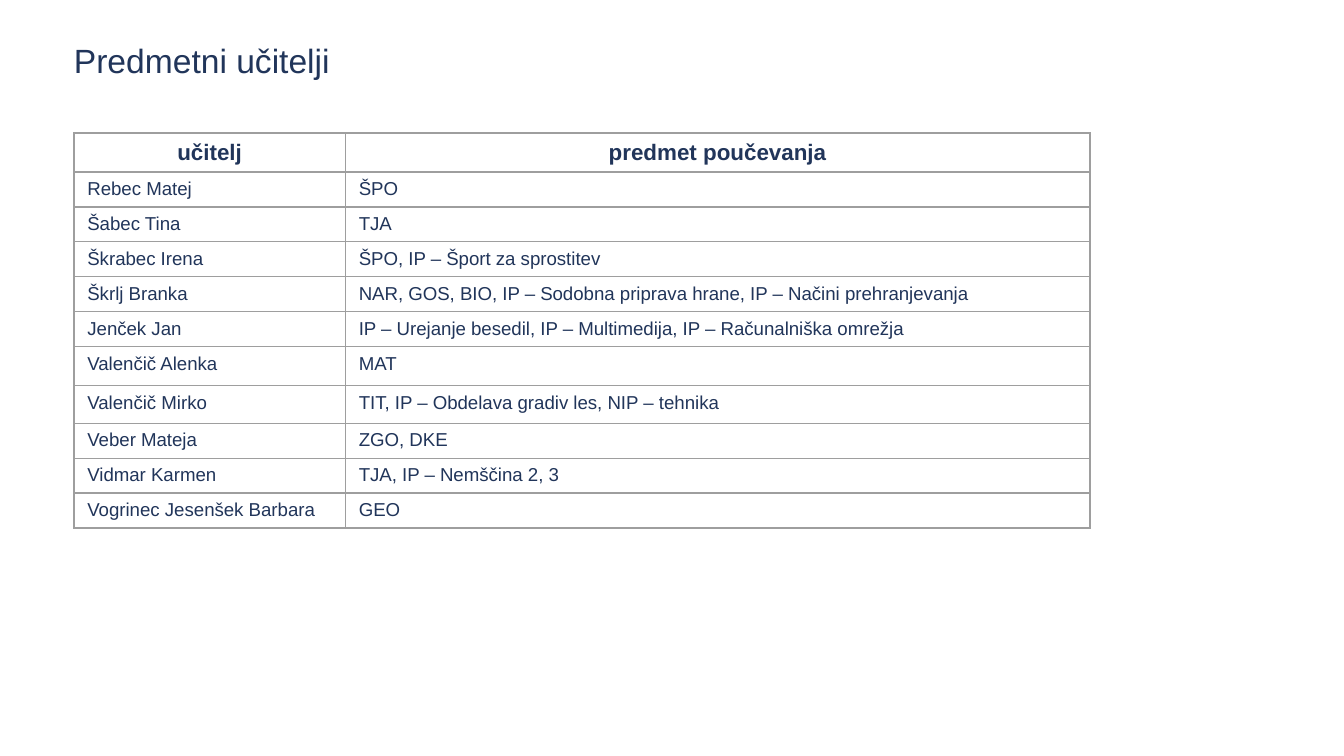
from lxml.etree import SubElement
from pptx import Presentation
from pptx.dml.color import RGBColor
from pptx.enum.text import MSO_ANCHOR, PP_ALIGN
from pptx.oxml.ns import qn
from pptx.util import Inches, Pt

# Content
TITLE = "Predmetni učitelji"
HEADER = ("učitelj", "predmet poučevanja")
TEACHERS = [
    ("Rebec Matej", "ŠPO"),
    ("Šabec Tina", "TJA"),
    ("Škrabec Irena", "ŠPO, IP – Šport za sprostitev"),
    ("Škrlj Branka", "NAR, GOS, BIO, IP – Sodobna priprava hrane, IP – Načini prehranjevanja"),
    ("Jenček Jan", "IP – Urejanje besedil, IP – Multimedija, IP – Računalniška omrežja"),
    ("Valenčič Alenka", "MAT"),
    ("Valenčič Mirko", "TIT, IP – Obdelava gradiv les, NIP – tehnika"),
    ("Veber Mateja", "ZGO, DKE"),
    ("Vidmar Karmen", "TJA, IP – Nemščina 2, 3"),
    ("Vogrinec Jesenšek Barbara", "GEO"),
]

# Format
COLORS = {"text": "21355A", "border": "9E9E9E"}
TITLE_FONT = {"name": "Arial", "size": Pt(18), "bold": False}
HEADER_FONT = {"name": "Arial", "size": Pt(12), "bold": True}
BODY_FONT = {"name": "Arial", "size": Pt(10), "bold": False}
COLUMN_WIDTHS = (2.02, 5.54)
ROW_HEIGHT = 0.26
TALL_ROWS = {0: 0.29, 6: 0.29, 7: 0.28}
MARGINS = {"margin_left": 0.1, "margin_right": 0.1, "margin_top": 0.05, "margin_bottom": 0.05}


def format_paragraph(paragraph, font_values, alignment):
    paragraph.alignment = alignment
    for name, value in font_values.items():
        setattr(paragraph.font, name, value)
    paragraph.font.color.rgb = RGBColor.from_string(COLORS["text"])


def add_borders(cell):
    properties = cell._tc.get_or_add_tcPr()
    for position, side in enumerate(("a:lnL", "a:lnR", "a:lnT", "a:lnB")):
        line = properties.makeelement(qn(side), {"w": str(Pt(0.75))})
        fill = SubElement(line, qn("a:solidFill"))
        SubElement(fill, qn("a:srgbClr"), val=COLORS["border"])
        properties.insert(position, line)


# Widescreen slide, 16:9
presentation = Presentation()
presentation.slide_width = Inches(10)
presentation.slide_height = Inches(10 * 9 / 16)
slide = presentation.slides.add_slide(presentation.slide_layouts[5])

# Title
title = slide.shapes.title
title.left, title.top, title.width, title.height = map(Inches, (0.45, 0.25, 7.55, 0.5))
frame = title.text_frame
frame.text = TITLE
frame.vertical_anchor = MSO_ANCHOR.TOP
frame.margin_top = Inches(0.05)
format_paragraph(frame.paragraphs[0], TITLE_FONT, PP_ALIGN.LEFT)

# Table of teachers and subjects
rows = [HEADER] + TEACHERS
heights = [TALL_ROWS.get(index, ROW_HEIGHT) for index in range(len(rows))]
table = slide.shapes.add_table(
    len(rows), len(HEADER), Inches(0.55), Inches(0.99),
    Inches(sum(COLUMN_WIDTHS)), Inches(sum(heights)),
).table
for column, width in zip(table.columns, COLUMN_WIDTHS):
    column.width = Inches(width)

for row_index, (row, height) in enumerate(zip(rows, heights)):
    table.rows[row_index].height = Inches(height)
    is_header = row_index == 0
    for column_index, text in enumerate(row):
        cell = table.cell(row_index, column_index)
        cell.text = text
        cell.fill.background()
        for name, value in MARGINS.items():
            setattr(cell, name, Inches(value))
        format_paragraph(
            cell.text_frame.paragraphs[0],
            HEADER_FONT if is_header else BODY_FONT,
            PP_ALIGN.CENTER if is_header else PP_ALIGN.LEFT,
        )
        add_borders(cell)

presentation.save("out.pptx")
